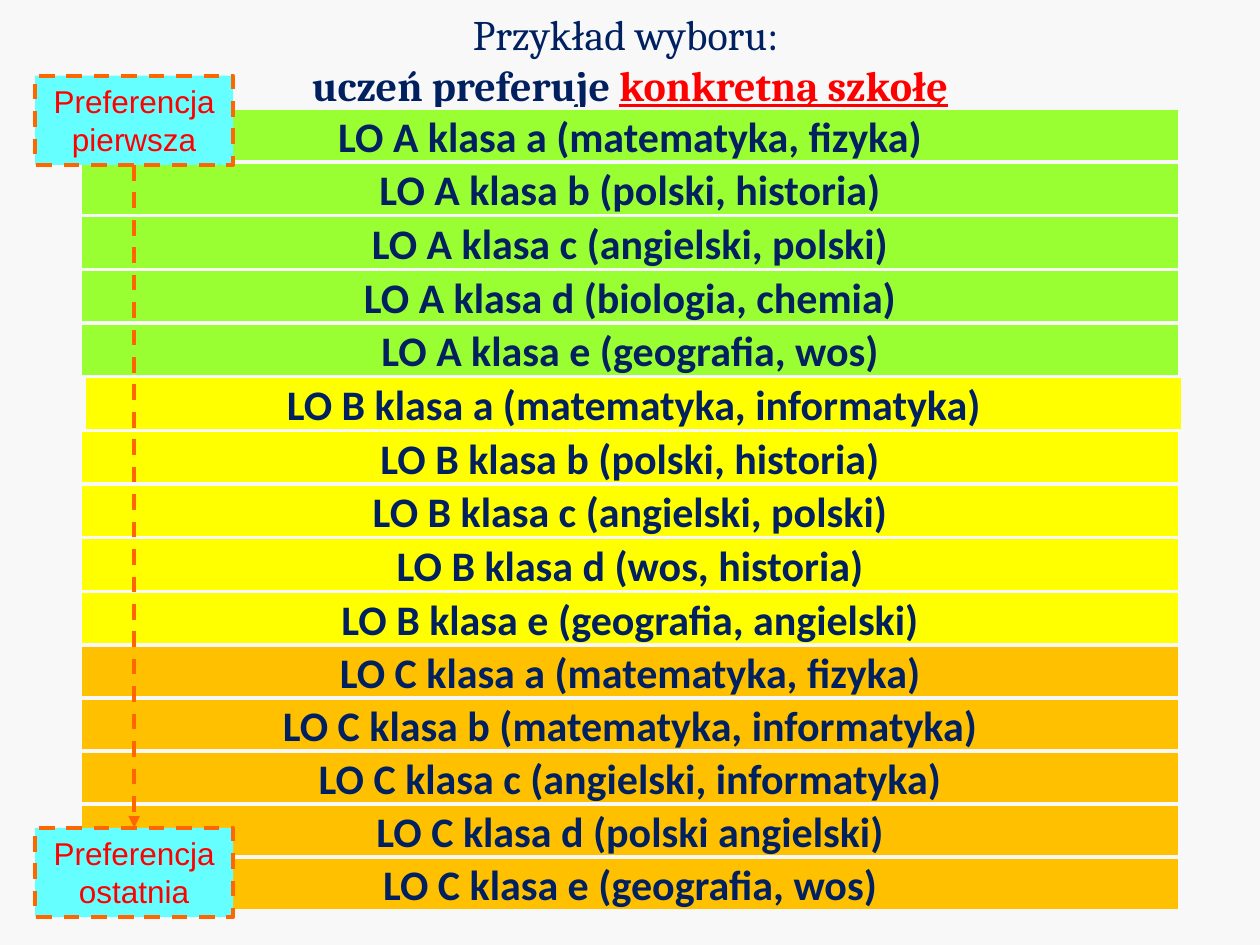
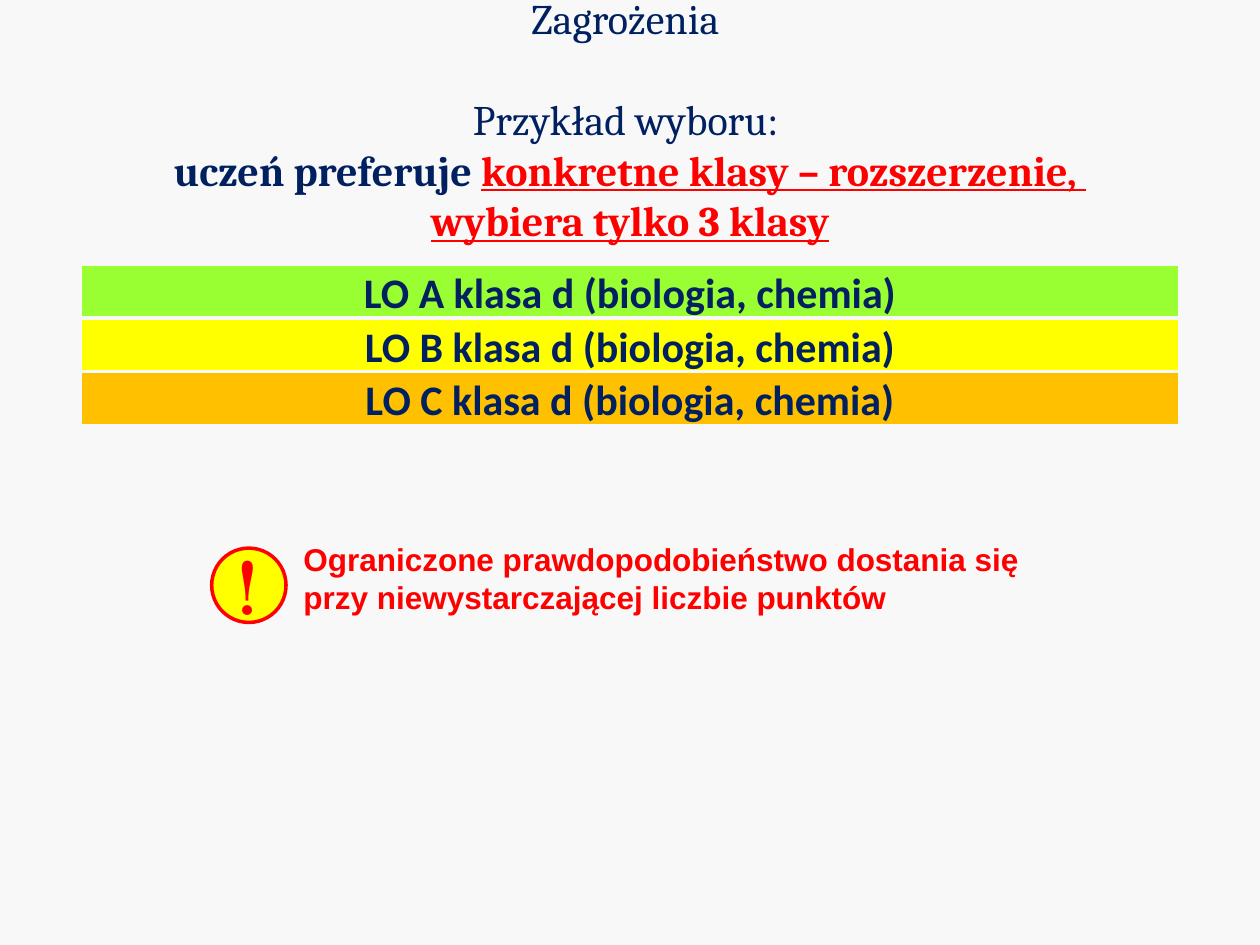
from dataclasses import dataclass

from lxml.etree import SubElement
from pptx import Presentation
from pptx.dml.color import RGBColor
from pptx.enum.dml import MSO_LINE
from pptx.enum.shapes import MSO_CONNECTOR, MSO_SHAPE
from pptx.enum.text import MSO_ANCHOR, MSO_AUTO_SIZE, PP_ALIGN
from pptx.oxml.ns import qn
from pptx.util import Inches, Pt


@dataclass(frozen=True)
class Theme:
    background: str = "F8F8F8"
    navy: str = "002060"
    red: str = "FF0000"
    yellow: str = "FFFF00"
    orange: str = "FF6600"
    cyan: str = "66FFFF"
    green: str = "99FF33"
    amber: str = "FFC000"
    title_font: str = "Cambria"
    row_font: str = "Calibri"
    note_font: str = "Arial"
    mark_font: str = "TeX Gyre Bonum"
    large: int = 24
    note: int = 18
    mark: int = 44
    thin: float = 2
    thick: float = 2.25


THEME = Theme()
SCHOOL_FILLS = {"A": THEME.green, "B": THEME.yellow, "C": THEME.amber}
ROW_LEFT, ROW_WIDTH, ROW_HEIGHT = 0.64, 8.72, 0.43
LABEL_LEFT, LABEL_WIDTH, LABEL_HEIGHT = 0.28, 1.57, 0.71
EMPHASIS = {"bold": True, "color": THEME.red, "underline": True}


def write_text(text_frame, paragraphs, *, font, size, color, bold=False,
               align=PP_ALIGN.CENTER, anchor=MSO_ANCHOR.TOP, wrap=True,
               margin=None, gaps=None):
    """Each paragraph is a list of (text, overrides); gaps maps index to space before."""
    text_frame.auto_size = MSO_AUTO_SIZE.NONE
    text_frame.word_wrap = wrap
    text_frame.vertical_anchor = anchor
    if margin is not None:
        text_frame.margin_left = text_frame.margin_right = Inches(margin)
        text_frame.margin_top = text_frame.margin_bottom = Inches(margin)
    for index, runs in enumerate(paragraphs):
        paragraph = text_frame.paragraphs[0] if index == 0 else text_frame.add_paragraph()
        paragraph.alignment = align
        paragraph.space_before = Pt((gaps or {}).get(index, 0))
        for text, overrides in runs:
            run = paragraph.add_run()
            run.text = text
            run.font.name = font
            run.font.size = Pt(size)
            run.font.bold = overrides.get("bold", bold)
            run.font.underline = overrides.get("underline", False)
            run.font.color.rgb = RGBColor.from_string(overrides.get("color", color))


class Deck:
    """Holds the theme and the slide being filled."""

    def __init__(self, theme):
        self.theme = theme
        self.presentation = Presentation()
        self.presentation.slide_width = Inches(10)
        self.presentation.slide_height = Inches(7.5)
        background = self.presentation.slide_master.background.fill
        background.solid()
        background.fore_color.rgb = RGBColor.from_string(theme.background)
        self.slide = None

    def add_slide(self, title, top, gaps=None):
        layout = self.presentation.slide_layouts.get_by_name("Title Only")
        self.slide = self.presentation.slides.add_slide(layout)
        shape = self.slide.shapes.title
        shape.left, shape.top = Inches(0), Inches(top)
        shape.width, shape.height = Inches(10), Inches(0.78)
        write_text(shape.text_frame, title, font=self.theme.title_font,
                   size=self.theme.large, color=self.theme.navy, gaps=gaps)

    def shape(self, kind, box, fill, outline, width):
        shape = self.slide.shapes.add_shape(kind, *map(Inches, box))
        shape.shadow.inherit = False
        shape.fill.solid()
        shape.fill.fore_color.rgb = RGBColor.from_string(fill)
        shape.line.color.rgb = RGBColor.from_string(outline)
        shape.line.width = Pt(width)
        return shape

    def row(self, school, class_name, subjects, top, left=ROW_LEFT):
        shape = self.shape(MSO_SHAPE.RECTANGLE, (left, top, ROW_WIDTH, ROW_HEIGHT),
                           SCHOOL_FILLS[school], self.theme.background, self.theme.thin)
        text = f"LO {school} klasa {class_name} ({subjects})"
        write_text(shape.text_frame, [[(text, {})]], font=self.theme.row_font,
                   size=self.theme.large, color=self.theme.navy, bold=True,
                   anchor=MSO_ANCHOR.MIDDLE, margin=0)

    def label(self, text, top):
        box = (LABEL_LEFT, top, LABEL_WIDTH, LABEL_HEIGHT)
        shape = self.shape(MSO_SHAPE.RECTANGLE, box, self.theme.cyan,
                           self.theme.orange, self.theme.thick)
        shape.line.dash_style = MSO_LINE.DASH
        write_text(shape.text_frame, [[(text, {})]], font=self.theme.note_font,
                   size=self.theme.note, color=self.theme.red)

    def down_arrow(self, x, top, bottom):
        connector = self.slide.shapes.add_connector(
            MSO_CONNECTOR.STRAIGHT, *map(Inches, (x, top, x, bottom)))
        connector.line.color.rgb = RGBColor.from_string(self.theme.orange)
        connector.line.width = Pt(self.theme.thick)
        connector.line.dash_style = MSO_LINE.DASH
        properties = connector._element.spPr
        SubElement(properties.find(qn("a:ln")), qn("a:tailEnd"), type="triangle")
        SubElement(properties, qn("a:effectLst"))

    def text(self, box, lines, **text_format):
        shape = self.slide.shapes.add_textbox(*map(Inches, box))
        write_text(shape.text_frame, [[(line, {})] for line in lines],
                   color=self.theme.red, align=PP_ALIGN.LEFT, wrap=False, **text_format)


def add_school_choice(deck):
    deck.add_slide([
        [("Przykład wyboru: ", {})],
        [("uczeń preferuje ", {"bold": True}), ("konkretną szkołę", EMPHASIS)],
    ], top=0.02)
    # School, top of its first row, distance between rows, subjects of classes a to e
    schools = [
        ("A", 0.86, 0.426, ["matematyka, fizyka", "polski, historia", "angielski, polski",
                            "biologia, chemia", "geografia, wos"]),
        ("B", 2.99, 0.426, ["matematyka, informatyka", "polski, historia",
                            "angielski, polski", "wos, historia", "geografia, angielski"]),
        ("C", 5.12, 0.42, ["matematyka, fizyka", "matematyka, informatyka",
                           "angielski, informatyka", "polski angielski",
                           "geografia, wos"]),
    ]
    for school, top, pitch, classes in schools:
        for index, (class_name, subjects) in enumerate(zip("abcde", classes)):
            left = 0.67 if school + class_name == "Ba" else ROW_LEFT
            deck.row(school, class_name, subjects, top + index * pitch, left)
    first_top, last_top = 0.6, 6.57
    deck.label("Preferencja pierwsza", first_top)
    deck.down_arrow(LABEL_LEFT + LABEL_WIDTH / 2, first_top + LABEL_HEIGHT, last_top)
    deck.label("Preferencja ostatnia", last_top)


def add_class_choice(deck):
    theme = deck.theme
    deck.add_slide([
        [("Zagrożenia ", {})],
        [("Przykład wyboru: ", {})],
        [("uczeń preferuje ", {"bold": True}),
         ("konkretne klasy – rozszerzenie, ", EMPHASIS)],
        [("wybiera tylko 3 klasy", EMPHASIS)],
    ], top=-0.11, gaps={1: 29})
    for index, school in enumerate(SCHOOL_FILLS):
        deck.row(school, "d", "biologia, chemia", 2.1 + index * 0.425)
    deck.text((2.31, 4.24, 6.01, 0.71),
              ["Ograniczone prawdopodobieństwo dostania się",
               "przy niewystarczającej liczbie punktów"],
              font=theme.note_font, size=theme.note, bold=True)
    deck.shape(MSO_SHAPE.OVAL, (1.68, 4.35, 0.59, 0.59), theme.yellow, theme.red, theme.thin)
    deck.text((1.78, 4.22, 0.39, 0.84), ["!"], font=theme.mark_font, size=theme.mark)


def main():
    deck = Deck(THEME)
    add_school_choice(deck)
    add_class_choice(deck)
    deck.presentation.save("out.pptx")


if __name__ == "__main__":
    main()
